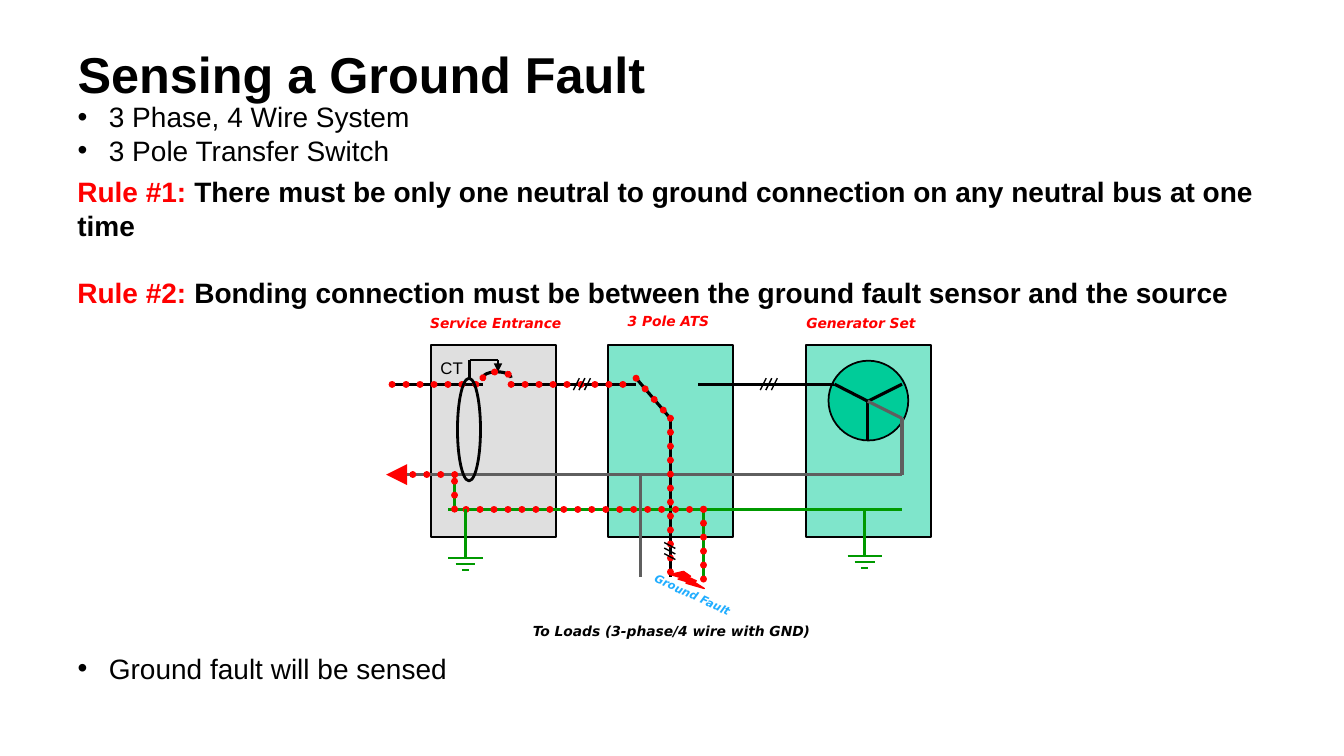
from dataclasses import dataclass
from itertools import pairwise

from lxml import etree
from pptx import Presentation
from pptx import util as u
from pptx.dml.color import RGBColor
from pptx.enum import dml, shapes, text
from pptx.oxml import ns


@dataclass(frozen=True)
class Theme:
    ink: str = "000000"
    red: str = "FF0000"
    green: str = "009900"
    neutral: str = "5F5F5F"
    teal: str = "00CC99"
    silver: str = "C0C0C0"
    sky: str = "20ADFF"
    font: str = "Arial"
    label_font: str = "DejaVu Sans"
    title_size: float = 36
    body_size: float = 20
    sensor_size: float = 12
    label_size: float = 9.9
    fault_size: float = 8
    wire: float = 2.25
    edge: float = 1.25
    thin: float = 1
    dots: float = 5


theme = Theme()


def write(para, words, size=theme.body_size, color=theme.ink, font=theme.font,
          bold=False, italic=False):
    span = para.add_run()
    span.text = words
    span.font.size = u.Pt(size)
    span.font.name = font
    span.font.bold = bold
    span.font.italic = italic
    span.font.color.rgb = RGBColor.from_string(color)


def outline(shape, color, width, dotted=False, arrow=False):
    shape.line.color.rgb = RGBColor.from_string(color)
    shape.line.width = u.Pt(width)
    properties = shape.element.spPr
    line = properties.find(ns.qn("a:ln"))
    if dotted:
        shape.line.dash_style = dml.MSO_LINE.ROUND_DOT
        line.set("cap", "rnd")
    if arrow:
        etree.SubElement(line, ns.qn("a:tailEnd"), type="triangle")
    etree.SubElement(properties, ns.qn("a:effectLst"))


deck = Presentation()
deck.slide_width, deck.slide_height = u.Cm(33.87), u.Cm(19.05)
page = deck.slides.add_slide(deck.slide_layouts.get_by_name("Two Content"))
for holder in list(page.placeholders):
    if holder.placeholder_format.idx > 2:
        holder.element.getparent().remove(holder.element)

title = page.shapes.title
title.left, title.top, title.width, title.height = map(u.Cm, (1.7, 0.56, 29.85, 2.39))
title.text_frame.vertical_anchor = text.MSO_ANCHOR.MIDDLE
title.text_frame.auto_size = text.MSO_AUTO_SIZE.NONE
heading = title.text_frame.paragraphs[0]
heading.alignment = text.PP_ALIGN.LEFT
heading.line_spacing = u.Pt(48)
write(heading, "Sensing a Ground Fault", size=theme.title_size, bold=True)

lists = [
    (1, (1.7, 2.39, 25.4, 1.96), ["3 Phase, 4 Wire System", "3 Pole Transfer Switch"]),
    (2, (1.7, 16.28, 9.91, 1.12), ["Ground fault will be sensed"]),
]
for index, place, items in lists:
    body = page.placeholders[index]
    body.left, body.top, body.width, body.height = map(u.Cm, place)
    frame = body.text_frame
    frame.auto_size = text.MSO_AUTO_SIZE.NONE
    for number, item in enumerate(items):
        para = frame.add_paragraph() if number else frame.paragraphs[0]
        para.space_before = u.Pt(0)
        indent = para._p.get_or_add_pPr()
        indent.set("marL", str(u.Cm(0.79)))
        indent.set("indent", str(-u.Cm(0.79)))
        etree.SubElement(indent, ns.qn("a:buChar"), char="•")
        write(para, item)

top, phase, neutral, ground = 8.69, 9.68, 11.96, 12.83
bond, load_neutral, load_phase, load_ground = 11.46, 16.15, 16.89, 17.73
hub, rim, hub_height, coil = 21.87, 22.73, 10.11, 10.54
load_end = 14.53
blade = [(16.03, 9.53), (load_phase, coil)]
supply = [(9.88, phase), (12.17, phase)]
feeder = [(12.88, phase), (16.03, phase)]

kind = shapes.MSO_SHAPE
solids = [
    (kind.RECTANGLE, (20.32, top, 3.15, 4.85), theme.teal, 50),
    (kind.RECTANGLE, (10.87, top, 3.15, 4.85), theme.silver, 50),
    (kind.RECTANGLE, (15.32, top, 3.15, 4.85), theme.teal, 50),
    (kind.OVAL, (20.88, 9.09, 2.01, 2.01), theme.teal, 100),
]
for form, place, color, opacity in solids:
    solid = page.shapes.add_shape(form, *map(u.Cm, place))
    solid.fill.solid()
    solid.fill.fore_color.rgb = RGBColor.from_string(color)
    tint = solid.element.spPr.find(".//" + ns.qn("a:srgbClr"))
    etree.SubElement(tint, ns.qn("a:alpha"), val=str(opacity * 1000))
    outline(solid, theme.ink, theme.edge)

conductors = [
    (supply, theme.ink),
    (feeder, theme.ink),
    ([(9.88, neutral), (rim, neutral)], theme.neutral),
    (blade + [(load_phase, load_end)], theme.ink),
    ([(17.6, phase), (21.03, phase), (hub, hub_height), (rim, phase)], theme.ink),
    ([(hub, hub_height), (hub, 11.1)], theme.ink),
    ([(hub, hub_height), (rim, coil), (rim, neutral)], theme.neutral),
    ([(bond, neutral), (bond, ground)], theme.green),
    ([(11.3, ground), (rim, ground)], theme.green),
    ([(load_neutral, neutral), (load_neutral, load_end)], theme.neutral),
    ([(load_ground, ground), (load_ground, load_end)], theme.green),
]
wires = [(route, color, theme.wire, False, False) for route, color in conductors]

return_path = [(load_ground, ground), (bond, ground), (bond, neutral)]
fault_routes = [supply, feeder, blade + [(load_phase, 14.68)],
                [(load_ground, ground), (load_ground, 14.81)], return_path]
wires += [(route, theme.red, theme.dots, True, False) for route in fault_routes]
wires.append(([(bond, neutral), (9.73, neutral)], theme.red, theme.dots, True, True))

for step in range(3):
    shift = 0.14 * step
    for left in (14.45, 19.16):
        slash = [(left + 0.15 + shift, 9.53), (left + shift, 9.83)]
        wires.append((slash, theme.ink, theme.thin, False, False))
    slash = [(17.02, 13.82 + shift), (16.74, 13.67 + shift)]
    wires.append((slash, theme.ink, theme.thin, False, False))

wires.append(([(11.84, 9.53), (11.84, 9.07), (12.55, 9.07)], theme.ink, 2, False, False))
wires.append(([(12.55, 9.07), (12.55, 9.37)], theme.ink, theme.thin, False, True))

for center, bar_top in ((21.79, 14.02), (11.73, 14.07)):
    wires.append(([(center, ground), (center, bar_top)], theme.green, theme.wire, False, False))
    for step, half in enumerate((0.43, 0.25, 0.08)):
        height = bar_top + 0.15 * step
        bar = [(center - half, height), (center + half, height)]
        wires.append((bar, theme.green, 1.5, False, False))

for route, color, width, dotted, arrow in wires:
    for start, end in pairwise(route):
        wire = page.shapes.add_connector(shapes.MSO_CONNECTOR.STRAIGHT, *map(u.Cm, start + end))
        outline(wire, color, width, dotted, arrow)

for color, width, dotted in ((theme.ink, theme.wire, False), (theme.red, theme.dots, True)):
    breaker = page.shapes.add_shape(kind.RIGHT_BRACKET, *map(u.Cm, (12.45, 9.09, 0.15, 0.71)))
    breaker.rotation = 270
    breaker.adjustments[0] = 2.34
    breaker.fill.background()
    outline(breaker, color, width, dotted)

sensor = page.shapes.add_shape(kind.OVAL, *map(u.Cm, (11.53, 9.53, 0.58, 2.59)))
sensor.fill.background()
outline(sensor, theme.ink, 2)

bolt = page.shapes.add_shape(kind.LIGHTNING_BOLT, *map(u.Cm, (load_phase, 14.4, 0.86, 0.43)))
bolt.fill.solid()
bolt.fill.fore_color.rgb = RGBColor.from_string(theme.red)
outline(bolt, theme.red, theme.thin)

label = dict(size=theme.label_size, font=theme.label_font, bold=True, italic=True)
red_label = label | dict(color=theme.red)
fault_label = label | dict(size=theme.fault_size, color=theme.sky)
labels = [
    ("Service Entrance", (10.59, 7.8, 3.96, 0.69), 0, red_label),
    ("3 Pole ATS", (15.57, 7.75, 2.62, 0.69), 0, red_label),
    ("Generator Set", (20.07, 7.8, 3.28, 0.69), 0, red_label),
    ("To Loads (3-phase/4 wire with GND)", (13.18, 15.57, 7.85, 0.69), 0, label),
    ("Ground Fault", (16.08, 15.09, 4.45, 0.61), 24.9, fault_label),
    ("CT", (10.85, 8.89, 1.09, 0.76), 0, dict(size=theme.sensor_size)),
]
for words, place, angle, style in labels:
    box = page.shapes.add_textbox(*map(u.Cm, place))
    box.rotation = angle
    box.text_frame.word_wrap = bool(angle)
    write(box.text_frame.paragraphs[0], words, **style)

rules = [
    ("Rule #1: ", "There must be only one neutral to ground connection on any neutral bus at one time"),
    ("Rule #2: ", "Bonding connection must be between the ground fault sensor and the source"),
]
box = page.shapes.add_textbox(*map(u.Cm, (0.43, 4.27, 33.02, 2.82)))
box.text_frame.word_wrap = True
for number, (name, words) in enumerate(rules):
    para = box.text_frame.add_paragraph() if number else box.text_frame.paragraphs[0]
    para._p.get_or_add_pPr().set("marL", str(u.Cm(1.27)))
    para.space_before = u.Pt(24 * number)
    write(para, name, color=theme.red, bold=True)
    write(para, words, bold=True)

deck.save("out.pptx")
